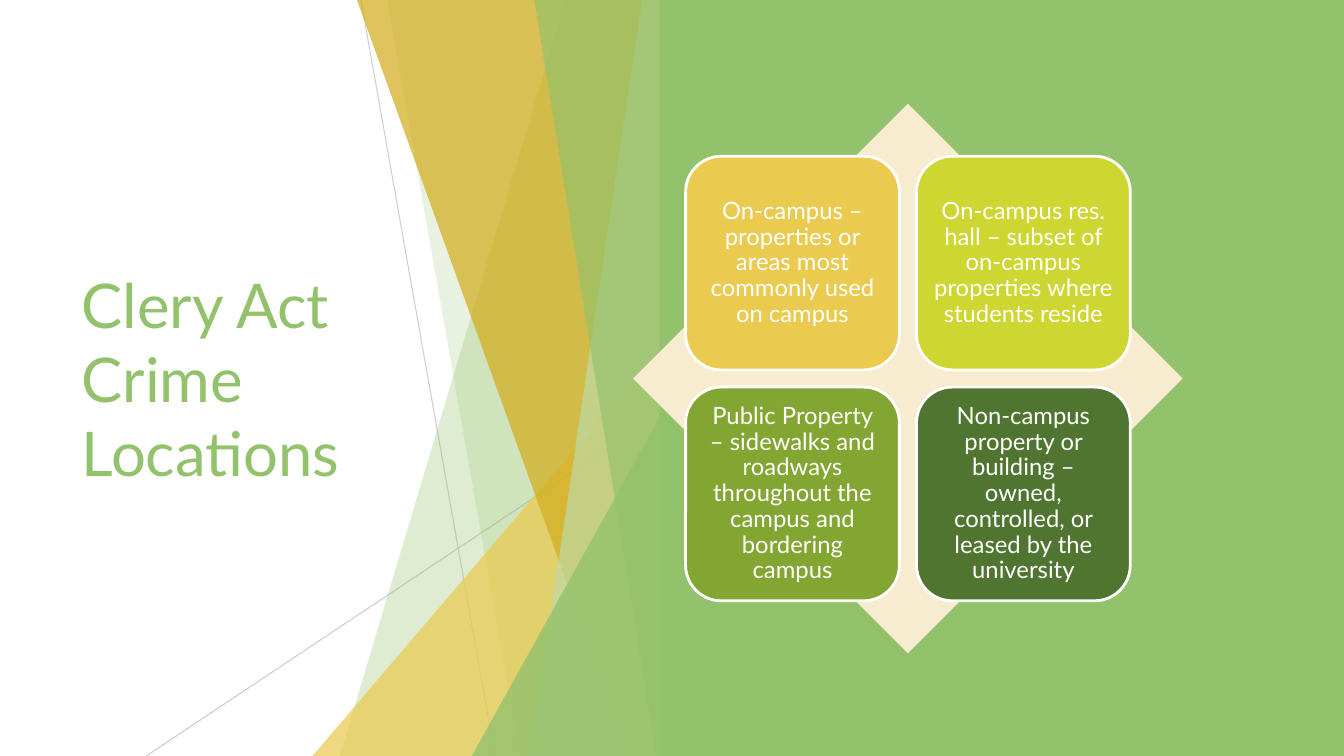
from lxml import etree
from pptx import Presentation
from pptx.dml.color import RGBColor
from pptx.enum.shapes import MSO_CONNECTOR, MSO_SHAPE as SHAPE
from pptx.enum.text import MSO_ANCHOR, MSO_AUTO_SIZE, PP_ALIGN
from pptx.oxml.ns import qn
from pptx.util import Inches, Pt

# Content
TITLE = "Clery Act Crime Locations"
LOCATIONS = [
    ("On-campus – properties or areas most commonly used on campus", "EACA4F"),
    ("On-campus res. hall – subset of on-campus properties where students reside", "CED632"),
    ("Public Property – sidewalks and roadways throughout the campus and bordering campus", "83A531"),
    ("Non-campus property or building – owned, controlled, or leased by the university", "4F7530"),
]
FONT, GREEN, WHITE = "Lato", "93C26C", "FFFFFF"

# Decoration: thin lines (x1, y1, x2, y2, opacity)
RAYS = [(3.58, 0, 4.91, 7.5, 75), (6.66, 4.03, 1.45, 7.5, 80)]
# Back to front: ("band", top x, bottom x) or ("wedge", left, top), colour, opacity
FACETS = [
    ("band", 5.61, 3.37, GREEN, 30),
    ("band", 3.84, 5.16, GREEN, 20),
    ("wedge", 3.1, 3.33, "EACA4F", 72),
    ("band", 3.54, 6.24, "D2AC19", 70),
    ("band", 6.37, 5.25, "BEDAA7", 70),
    ("band", 5.3, 6.51, GREEN, 65),
    ("wedge", 4.68, 3.93, GREEN, 80),
]
FACET_RIGHT, SLIDE_W, SLIDE_H = 6.66, 13.33, 7.5
PANEL_LEFT = 6.54
CARD_LEFT, CARD_TOP, CARD_SIZE, CARD_PITCH = 6.8, 1.55, 2.12, 2.29

prs = Presentation()
prs.slide_width, prs.slide_height = Inches(SLIDE_W), Inches(SLIDE_H)
slide = prs.slides.add_slide(prs.slide_layouts[5])
shapes = slide.shapes


def paint(fmt, color, opacity=100):
    """Give a fill a solid colour, see-through below 100."""
    fmt.solid()
    fmt.fore_color.rgb = RGBColor.from_string(color)
    if opacity < 100:
        rgb = fmt._xPr.find(qn("a:solidFill")).find(qn("a:srgbClr"))
        etree.SubElement(rgb, qn("a:alpha"), val=str(opacity * 1000))


def finish(shape, color, opacity=100):
    shape.shadow.inherit = False
    paint(shape.fill, color, opacity)
    shape.line.fill.background()
    return shape


def add_block(kind, left, top, width, height, color, opacity=100):
    box = [Inches(v) for v in (left, top, width, height)]
    return finish(shapes.add_shape(kind, *box), color, opacity)


def write(shape, text, size, color, align, frame_format):
    frame = shape.text_frame
    frame.text = text
    for name, value in frame_format.items():
        setattr(frame, name, value)
    paragraph = frame.paragraphs[0]
    paragraph.alignment = align
    font = paragraph.runs[0].font
    font.name, font.size = FONT, Pt(size)
    font.color.rgb = RGBColor.from_string(color)
    return paragraph


# Title
FRAME = {"word_wrap": True, "vertical_anchor": MSO_ANCHOR.MIDDLE,
         "auto_size": MSO_AUTO_SIZE.NONE}
title = shapes.title
title.left, title.top, title.width, title.height = (
    Inches(v) for v in (0.71, 1.51, 3.88, 4.48))
write(title, TITLE, 44, GREEN, PP_ALIGN.LEFT, FRAME)

# Thin rays
for *ends, opacity in RAYS:
    ray = shapes.add_connector(MSO_CONNECTOR.STRAIGHT, *(Inches(v) for v in ends))
    ray.line.width = Pt(0.75)
    paint(ray.line.fill, "BFBFBF", opacity)
    etree.SubElement(ray._element.spPr, qn("a:effectLst"))

# Overlapping facets
for kind, a, b, color, opacity in FACETS:
    if kind == "wedge":
        wedge = add_block(SHAPE.ISOSCELES_TRIANGLE, a, b, FACET_RIGHT - a,
                          SLIDE_H - b, color, opacity)
        wedge.adjustments[0] = 1
    else:
        corners = [(FACET_RIGHT, 0), (FACET_RIGHT, SLIDE_H), (b, SLIDE_H)]
        outline = shapes.build_freeform(Inches(a), 0)
        outline.add_line_segments([(Inches(x), Inches(y)) for x, y in corners])
        finish(outline.convert_to_shape(), color, opacity)

# Green panel and diamond
add_block(SHAPE.RECTANGLE, PANEL_LEFT, 0, SLIDE_W - PANEL_LEFT, SLIDE_H, GREEN)
add_block(SHAPE.DIAMOND, 6.28, 1.03, 5.45, 5.45, "F7ECD0")

# Location cards, two by two
CARD_FRAME = FRAME | {f"margin_{side}": Inches(0.07)
                      for side in ("left", "top", "right", "bottom")}
for i, (text, color) in enumerate(LOCATIONS):
    row, col = divmod(i, 2)
    card = add_block(SHAPE.ROUNDED_RECTANGLE, CARD_LEFT + col * CARD_PITCH,
                     CARD_TOP + row * CARD_PITCH, CARD_SIZE, CARD_SIZE, color)
    paint(card.line.fill, WHITE)
    card.line.width = Pt(2)
    write(card, text, 17, WHITE, PP_ALIGN.CENTER, CARD_FRAME).line_spacing = 0.9

prs.save("out.pptx")
